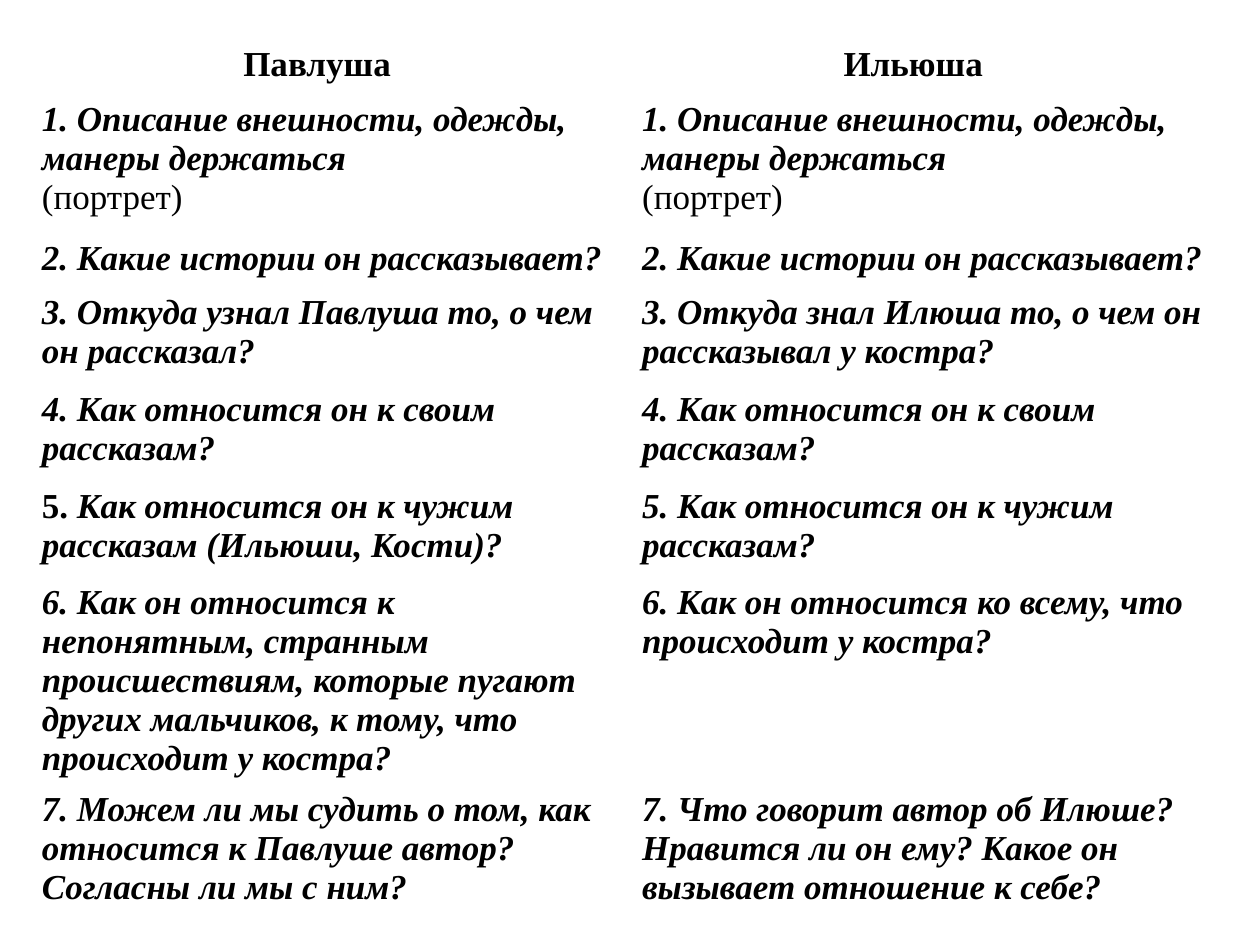
from dataclasses import dataclass

from pptx import Presentation
from pptx.dml.color import RGBColor
from pptx.util import Cm, Length, Pt


@dataclass(frozen=True)
class Theme:
    font: str = "Times New Roman"
    size: Length = Pt(20)
    ink: RGBColor = RGBColor(0x00, 0x00, 0x00)
    name_indent: Length = Cm(4.06)


@dataclass(frozen=True)
class Line:
    """One paragraph; an upright lead may precede the main text."""
    body: str
    bold: bool = True
    italic: bool = True
    lead: str = ""
    indent: Length = Cm(0)


@dataclass(frozen=True)
class Row:
    height: Length
    pavlusha: list[Line]
    ilyusha: list[Line]


THEME = Theme()


def name(hero: str) -> list[Line]:
    return [Line(hero, italic=False, indent=THEME.name_indent)]


def question(body: str, lead: str = "") -> list[Line]:
    return [Line(body, lead=lead)]


PORTRAIT = [
    Line("1. Описание внешности, одежды, манеры держаться"),
    Line("(портрет)", bold=False, italic=False),
]
STORIES = question("2. Какие истории он рассказывает?")
OWN_STORIES = question("4. Как относится он к своим рассказам?")

ROWS = [
    Row(Cm(1.1), name("Павлуша"), name("Ильюша")),
    Row(Cm(2.8), PORTRAIT, PORTRAIT),
    Row(Cm(1.1), STORIES, STORIES),
    Row(Cm(1.95),
        question("3. Откуда узнал Павлуша то, о чем он рассказал?"),
        question("3. Откуда знал Илюша то, о чем он рассказывал у костра?")),
    Row(Cm(1.95), OWN_STORIES, OWN_STORIES),
    Row(Cm(1.95),
        question("Как относится он к чужим рассказам (Ильюши, Кости)?", lead="5. "),
        question("5. Как относится он к чужим рассказам?")),
    Row(Cm(3.63),
        question("6. Как он относится к непонятным, странным происшествиям, которые "
                 "пугают других мальчиков, к тому, что происходит у костра?"),
        question("6. Как он относится ко всему, что происходит у костра?")),
    Row(Cm(2.8),
        question("7. Можем ли мы судить о том, как относится к Павлуше автор? "
                 "Согласны ли мы с ним?"),
        question("7. Что говорит автор об Илюше? Нравится ли он ему? "
                 "Какое он вызывает отношение к себе?")),
]


def write_line(paragraph, line: Line) -> None:
    if line.indent:
        paragraph._p.get_or_add_pPr().set("marL", str(int(line.indent)))
    font = paragraph.font
    font.name, font.size, font.bold = THEME.font, THEME.size, line.bold
    font.color.rgb = THEME.ink
    if line.lead:
        lead = paragraph.add_run()
        lead.text, lead.font.italic = line.lead, False
        body = paragraph.add_run()
        body.text, body.font.italic = line.body, line.italic
    else:
        font.italic = line.italic
        paragraph.add_run().text = line.body


def fill_cell(cell, lines: list[Line]) -> None:
    cell.fill.background()
    frame = cell.text_frame
    for index, line in enumerate(lines):
        write_line(frame.add_paragraph() if index else frame.paragraphs[0], line)


def main() -> None:
    deck = Presentation()
    deck.slide_width, deck.slide_height = Cm(25.4), Cm(19.05)
    slide = deck.slides.add_slide(deck.slide_layouts[6])
    plan = slide.shapes.add_table(
        len(ROWS), 2, Cm(0.59), Cm(0.79), Cm(24.2), sum(row.height for row in ROWS)
    ).table
    for index, row in enumerate(ROWS):
        plan.rows[index].height = row.height
        for column, lines in enumerate((row.pavlusha, row.ilyusha)):
            fill_cell(plan.cell(index, column), lines)
    deck.save("out.pptx")


if __name__ == "__main__":
    main()
